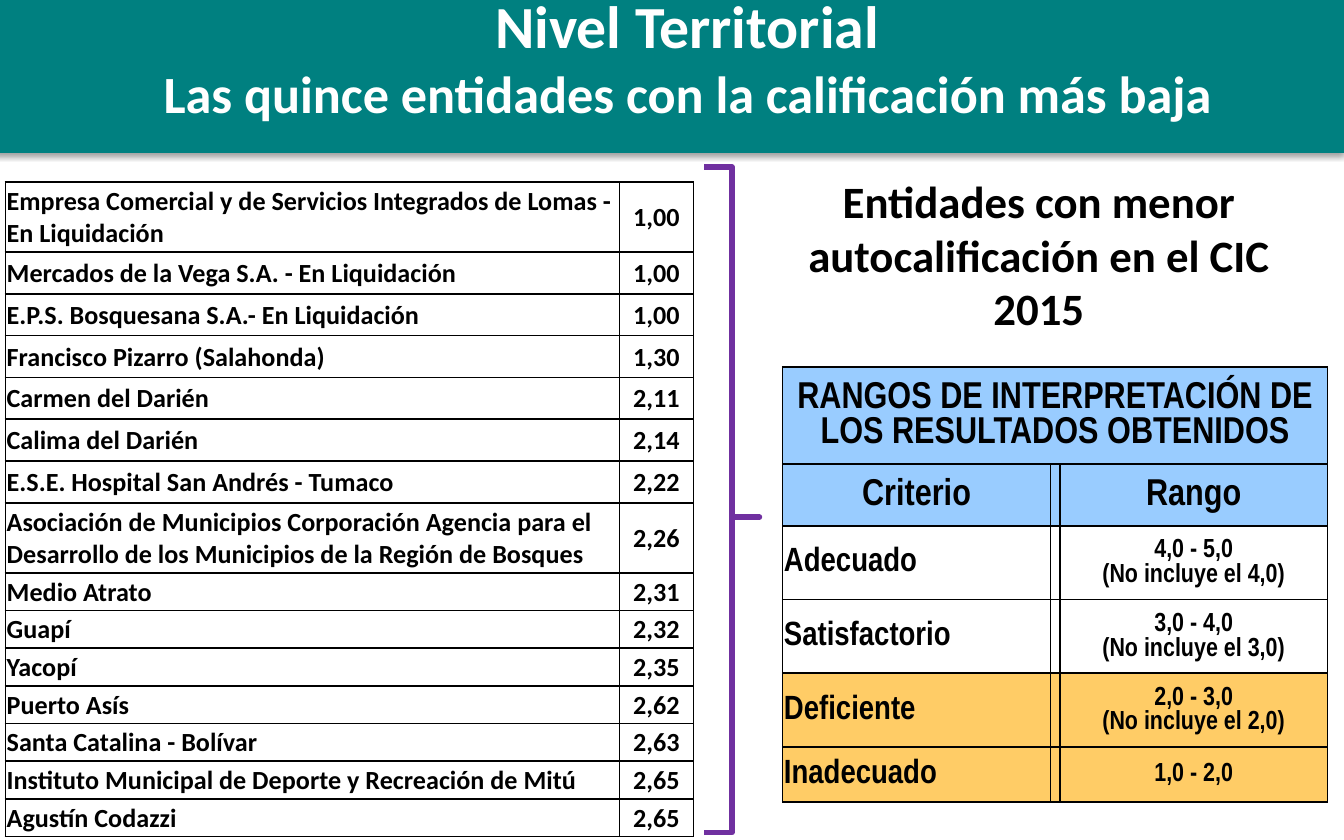
import pptx
import pptx.dml.color
import pptx.enum.shapes
import pptx.enum.text
import pptx.oxml
import pptx.oxml.ns
import pptx.util

Pt = pptx.util.Pt
RGBColor = pptx.dml.color.RGBColor
Align = pptx.enum.text.PP_ALIGN
Anchor = pptx.enum.text.MSO_ANCHOR
Shape = pptx.enum.shapes.MSO_SHAPE

TEAL = RGBColor(0x00, 0x80, 0x80)
PURPLE = RGBColor(0x70, 0x30, 0xA0)
SKY = RGBColor(0x99, 0xCC, 0xFF)
AMBER = RGBColor(0xFF, 0xCC, 0x66)
WHITE = RGBColor(0xFF, 0xFF, 0xFF)
BLACK = RGBColor(0x00, 0x00, 0x00)

TALL, MEDIUM, LOW = 37.5, 22.4, 20.2
ENTITIES = [
    ("Empresa Comercial y de Servicios Integrados de Lomas - En Liquidación", "1,00", TALL),
    ("Mercados de la Vega S.A. - En Liquidación", "1,00", MEDIUM),
    ("E.P.S. Bosquesana S.A.- En Liquidación", "1,00", MEDIUM),
    ("Francisco Pizarro (Salahonda)", "1,30", MEDIUM),
    ("Carmen del Darién", "2,11", MEDIUM),
    ("Calima del Darién", "2,14", MEDIUM),
    ("E.S.E. Hospital San Andrés - Tumaco", "2,22", MEDIUM),
    ("Asociación de Municipios Corporación Agencia para el Desarrollo "
     "de los Municipios de la Región de Bosques", "2,26", TALL),
    ("Medio Atrato", "2,31", LOW),
    ("Guapí", "2,32", LOW),
    ("Yacopí", "2,35", LOW),
    ("Puerto Asís", "2,62", LOW),
    ("Santa Catalina - Bolívar", "2,63", LOW),
    ("Instituto Municipal de Deporte y Recreación de Mitú", "2,65", LOW),
    ("Agustín Codazzi", "2,65", LOW),
]
RANGES = [
    ("Adecuado", "4,0 - 5,0\n(No incluye el 4,0)", 39.5, WHITE),
    ("Satisfactorio", "3,0 - 4,0\n(No incluye el 3,0)", 39.5, WHITE),
    ("Deficiente", "2,0 - 3,0\n(No incluye el 2,0)", 39.5, AMBER),
    ("Inadecuado", "1,0 - 2,0", 29.5, AMBER),
]


def apply(target, values):
    for name, value in values.items():
        setattr(target, name, value)


class SlideBuilder:
    """Holds the shared style and the page being filled; lengths are in points."""

    cell_format = {"margin_left": Pt(0.7), "margin_right": Pt(0.7), "margin_top": Pt(0.7),
                   "margin_bottom": 0, "vertical_anchor": Anchor.MIDDLE}
    frame_format = {"word_wrap": True, "vertical_anchor": Anchor.TOP,
                    "auto_size": pptx.enum.text.MSO_AUTO_SIZE.NONE}

    def __init__(self, page):
        self.page = page

    def fill_text(self, frame, text, sizes, font="Calibri", color=BLACK, align=Align.CENTER):
        """Fill the frame; sizes gives one size per paragraph, the last one repeating."""
        frame.text = text
        for index, para in enumerate(frame.paragraphs):
            para.alignment = align
            size = sizes[min(index, len(sizes) - 1)]
            for span in para.runs:
                apply(span.font, {"name": font, "size": Pt(size), "bold": True})
                span.font.color.rgb = color

    def place(self, box, left, top, width, height):
        apply(box, {"left": Pt(left), "top": Pt(top), "width": Pt(width), "height": Pt(height)})

    def title(self, text, sizes, *bounds):
        box = self.page.shapes.title
        self.place(box, *bounds)
        apply(box.text_frame, self.frame_format)
        self.fill_text(box.text_frame, text, sizes, color=WHITE)

    def text(self, text, size, *bounds):
        box = self.page.shapes.add_textbox(*map(Pt, bounds))
        apply(box.text_frame, self.frame_format)
        self.fill_text(box.text_frame, text, [size])

    def banner(self, color, *bounds):
        """Add a filled bar with a soft lower shadow, behind everything else."""
        bar = self.page.shapes.add_shape(Shape.RECTANGLE, *map(Pt, bounds))
        bar.fill.solid()
        bar.fill.fore_color.rgb = color
        bar.line.fill.background()
        bar.shadow.inherit = False
        effects = bar.element.spPr.find(pptx.oxml.ns.qn("a:effectLst"))
        effects.append(pptx.oxml.parse_xml(
            f'<a:outerShdw {pptx.oxml.ns.nsdecls("a")} blurRad="{Pt(3.1)}" dist="{Pt(1.6)}" '
            'dir="5400000" rotWithShape="0"><a:srgbClr val="000000">'
            '<a:alpha val="38000"/></a:srgbClr></a:outerShdw>'))
        self.page.shapes.element.insert(2, bar.element)

    def brace(self, color, weight, tip, *bounds):
        """Add a square bracket that opens to the left."""
        brace = self.page.shapes.add_shape(Shape.LEFT_BRACE, *map(Pt, bounds))
        brace.rotation = 180
        brace.adjustments[0] = 0
        brace.adjustments[1] = tip
        brace.fill.background()
        brace.line.color.rgb = color
        brace.line.width = Pt(weight)
        brace.shadow.inherit = False

    def table(self, left, top, widths, heights):
        bounds = (left, top, sum(widths), sum(heights))
        table = self.page.shapes.add_table(len(heights), len(widths), *map(Pt, bounds)).table
        apply(table, {"first_row": False, "horz_banding": False})
        for column, width in zip(table.columns, widths):
            column.width = Pt(width)
        for row, height in zip(table.rows, heights):
            row.height = Pt(height)
        return table

    def cell(self, cell, fill, text="", size=14, **style):
        apply(cell, self.cell_format)
        properties = cell._tc.get_or_add_tcPr()
        for side in "LRTB":
            properties.append(pptx.oxml.parse_xml(
                f'<a:ln{side} {pptx.oxml.ns.nsdecls("a")} w="{Pt(1)}"><a:solidFill>'
                f'<a:srgbClr val="{BLACK}"/></a:solidFill></a:ln{side}>'))
        cell.fill.solid()
        cell.fill.fore_color.rgb = fill
        self.fill_text(cell.text_frame, text, [size], **style)

    def entity_table(self, left, top):
        table = self.table(left, top, [329, 39.6], [height for *_, height in ENTITIES])
        for index, (entity, score, _) in enumerate(ENTITIES):
            self.cell(table.cell(index, 0), WHITE, entity, align=Align.LEFT)
            self.cell(table.cell(index, 1), WHITE, score)

    def range_table(self, left, top):
        heights = [52, 33] + [height for _, _, height, _ in RANGES]
        table = self.table(left, top, [143.5, 5, 143.5], heights)
        narrow = {"font": "Arial Narrow"}
        heading = "RANGOS DE INTERPRETACIÓN DE\nLOS RESULTADOS OBTENIDOS"
        for column, text in enumerate([heading, "", ""]):
            self.cell(table.cell(0, column), SKY, text, 20, **narrow)
        table.cell(0, 0).merge(table.cell(0, 2))
        for column, text in enumerate(["Criterio", "", "Rango"]):
            self.cell(table.cell(1, column), SKY, text, 20, **narrow)
        for index, (criterion, span, _, fill) in enumerate(RANGES, start=2):
            self.cell(table.cell(index, 0), fill, criterion, 18, align=Align.JUSTIFY, **narrow)
            self.cell(table.cell(index, 1), fill)
            self.cell(table.cell(index, 2), fill, span, 14, **narrow)


def main():
    deck = pptx.Presentation()
    apply(deck, {"slide_width": Pt(720), "slide_height": Pt(450)})
    builder = SlideBuilder(deck.slides.add_slide(deck.slide_layouts[5]))
    builder.banner(TEAL, -3, -1.5, 723, 83.5)
    builder.title("Nivel Territorial\nLas quince entidades con la calificación más baja",
                  [32, 28], 55.5, -9.4, 625.5, 73.5)
    builder.entity_table(2.9, 97.5)
    builder.brace(PURPLE, 3, 0.474, 377.3, 89.5, 29.5, 356.5)
    builder.range_table(419.3, 196.7)
    builder.text("Entidades con menor autocalificación en el CIC 2015", 24, 416, 89.5, 281, 97)
    deck.save("out.pptx")


if __name__ == "__main__":
    main()
